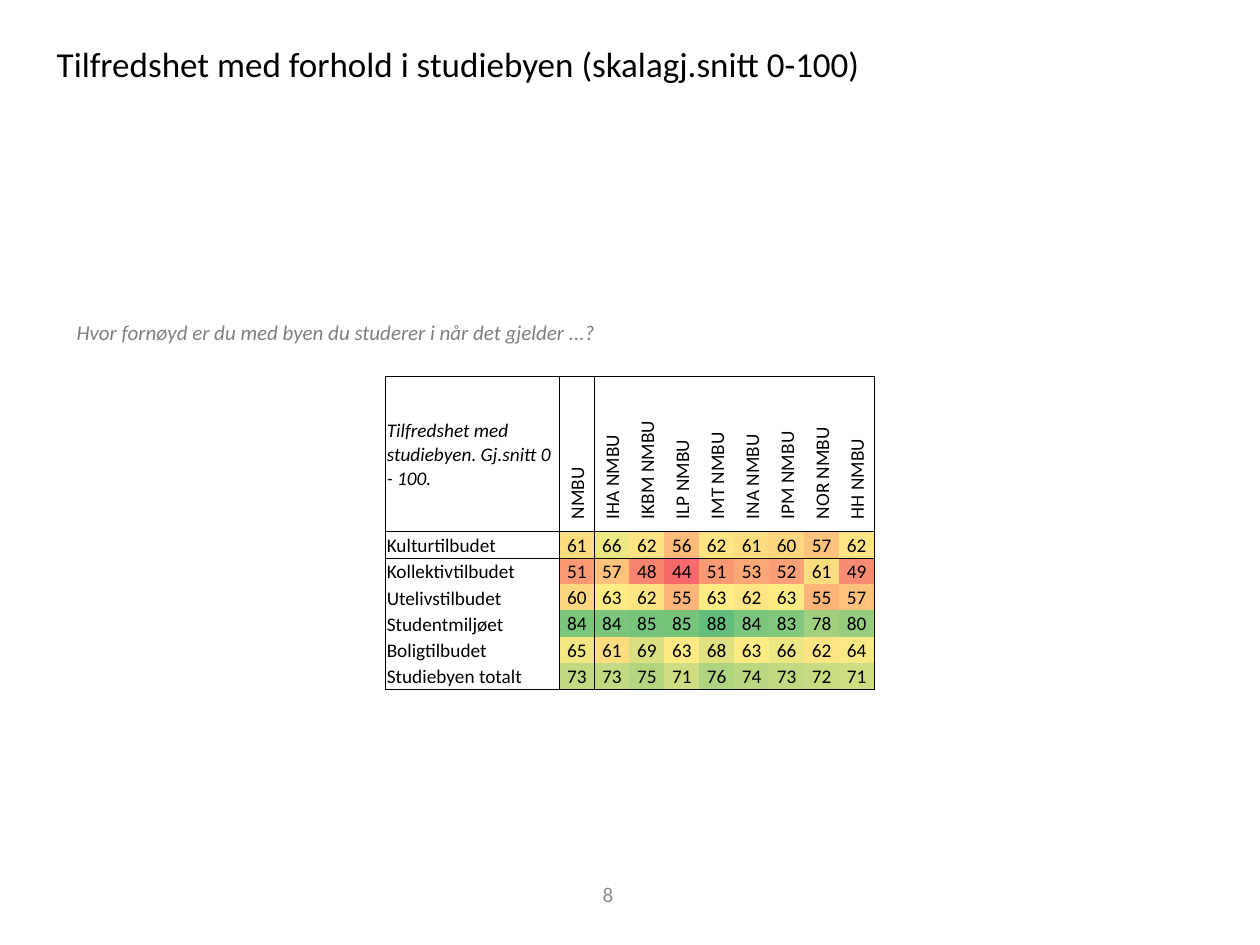
from lxml import etree
from pptx import Presentation
from pptx.dml.color import RGBColor
from pptx.enum import text
from pptx.oxml import ns
from pptx.util import Inches, Pt

COLORS = {"ink": "000000", "question": "808080", "page": "8C8C8C",
          "low": "F8696B", "middle": "FFEB84", "high": "63BE7B"}
LOW, MIDDLE, HIGH = 44, 63, 88
NO_STYLE = "{2D5ABB26-0587-4C30-8999-92F81FD0307C}"

INSTITUTES = ["NMBU", "IHA NMBU", "IKBM NMBU", "ILP NMBU", "IMT NMBU",
              "INA NMBU", "IPM NMBU", "NOR NMBU", "HH NMBU"]
SCORES = {
    "Kulturtilbudet": [61, 66, 62, 56, 62, 61, 60, 57, 62],
    "Kollektivtilbudet": [51, 57, 48, 44, 51, 53, 52, 61, 49],
    "Utelivstilbudet": [60, 63, 62, 55, 63, 62, 63, 55, 57],
    "Studentmiljøet": [84, 84, 85, 85, 88, 84, 83, 78, 80],
    "Boligtilbudet": [65, 61, 69, 63, 68, 63, 66, 62, 64],
    "Studiebyen totalt": [73, 73, 75, 71, 76, 74, 73, 72, 71],
}


def score_color(score):
    """Blend red to yellow below the middle score, yellow to green above it."""
    if score < MIDDLE:
        start, end, share = "low", "middle", (score - LOW) / (MIDDLE - LOW)
    else:
        start, end, share = "middle", "high", (score - MIDDLE) / (HIGH - MIDDLE)
    pairs = zip(bytes.fromhex(COLORS[start]), bytes.fromhex(COLORS[end]))
    return RGBColor(*(round(a + (b - a) * share) for a, b in pairs))


def write(frame, words, size, color="ink", italic=False, align=text.PP_ALIGN.LEFT):
    frame.text = words
    paragraph = frame.paragraphs[0]
    paragraph.alignment = align
    font = paragraph.runs[0].font
    font.name, font.size, font.italic = "Calibri", Pt(size), italic
    font.color.rgb = RGBColor.from_string(COLORS[color])


def place(shape, box):
    shape.left, shape.top, shape.width, shape.height = map(Inches, box)


def add_title(slide, box):
    title = slide.shapes.title
    place(title, box)
    frame = title.text_frame
    write(frame, "Tilfredshet med forhold i studiebyen (skalagj.snitt 0-100)", 20)
    frame.word_wrap = False
    frame.auto_size = text.MSO_AUTO_SIZE.SHAPE_TO_FIT_TEXT
    frame.vertical_anchor = text.MSO_ANCHOR.TOP


def add_label(slide, box, words, anchor=text.MSO_ANCHOR.TOP, **style):
    frame = slide.shapes.add_textbox(*map(Inches, box)).text_frame
    frame.word_wrap = True
    frame.vertical_anchor = anchor
    write(frame, words, 12, **style)


def set_borders(cell, sides):
    """Draw thin black lines on the given sides, named by letters of LRTB."""
    properties = cell._tc.get_or_add_tcPr()
    for index, side in enumerate(s for s in "LRTB" if s in sides):
        line = etree.Element(ns.qn("a:ln" + side), w=str(Pt(0.5)))
        fill = etree.SubElement(line, ns.qn("a:solidFill"))
        etree.SubElement(fill, ns.qn("a:srgbClr"), val=COLORS["ink"])
        properties.insert(index, line)


def fill_cell(cell, words, anchor=text.MSO_ANCHOR.MIDDLE, tight=True, **style):
    write(cell.text_frame, words, 11, **style)
    cell.vertical_anchor = anchor
    if tight:
        cell.margin_left = cell.margin_right = cell.margin_top = Inches(0.01)
        cell.margin_bottom = 0


def add_heatmap(slide, box, label_width=1.38, header_height=1.23):
    left, top, width, height = box
    last_row, last_column = len(SCORES), len(INSTITUTES)
    table = slide.shapes.add_table(last_row + 1, last_column + 1,
                                   *map(Inches, box)).table
    table.first_row = table.horz_banding = False
    table._tbl.tblPr.find(ns.qn("a:tableStyleId")).text = NO_STYLE
    for index, column in enumerate(table.columns):
        column.width = Inches((width - label_width) / last_column if index else label_width)
    for index, row in enumerate(table.rows):
        row.height = Inches((height - header_height) / last_row if index else header_height)

    fill_cell(table.cell(0, 0), "Tilfredshet med studiebyen. Gj.snitt 0 - 100.", italic=True)
    for column, institute in enumerate(INSTITUTES, 1):
        header = table.cell(0, column)
        fill_cell(header, institute, tight=False)
        header._tc.get_or_add_tcPr().set("vert", "vert270")

    for row, (topic, scores) in enumerate(SCORES.items(), 1):
        fill_cell(table.cell(row, 0), topic, anchor=text.MSO_ANCHOR.BOTTOM)
        for column, score in enumerate(scores, 1):
            cell = table.cell(row, column)
            fill_cell(cell, str(score), align=text.PP_ALIGN.CENTER)
            cell.fill.solid()
            cell.fill.fore_color.rgb = score_color(score)

    for row in range(last_row + 1):
        for column in range(last_column + 1):
            cell = table.cell(row, column)
            if row == 0 or column == 0:
                cell.fill.background()
            sides = ("L" if column <= 1 else "") + ("R" if column in (0, last_column) else "")
            sides += ("T" if row <= 1 else "") + ("B" if row in (0, last_row) else "")
            set_borders(cell, sides)


def main():
    deck = Presentation()
    deck.slide_width, deck.slide_height = Inches(10), Inches(7.5)
    slide = deck.slides.add_slide(deck.slide_layouts[5])
    add_title(slide, (0.35, 0.29, 6.64, 0.44))
    add_label(slide, (0.51, 2.49, 5, 0.3),
              "Hvor fornøyd er du med byen du studerer i når det gjelder ...?",
              color="question", italic=True)
    add_heatmap(slide, (3.06, 2.99, 3.88, 2.48))
    add_label(slide, (3.66, 6.9, 2.33, 0.4), "8", anchor=text.MSO_ANCHOR.MIDDLE,
              color="page", align=text.PP_ALIGN.CENTER)
    deck.save("out.pptx")


if __name__ == "__main__":
    main()
